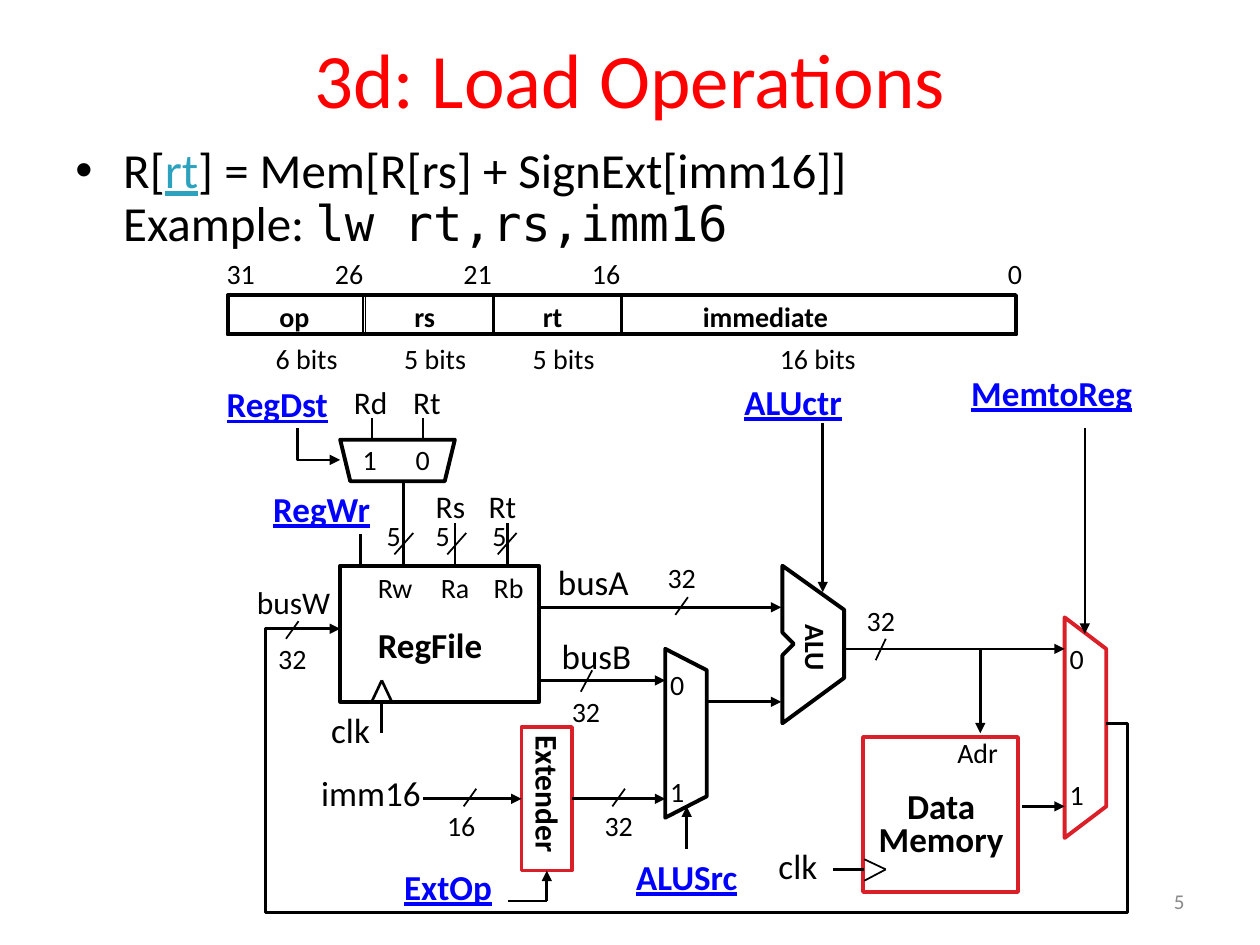
import lxml.etree
import pptx
import pptx.dml.color
import pptx.enum.shapes
import pptx.enum.text
import pptx.oxml.ns
import pptx.util

RGBColor = pptx.dml.color.RGBColor
BLACK = RGBColor(0x00, 0x00, 0x00)
BLUE = RGBColor(0x00, 0x00, 0xFF)
RED = RGBColor(0xFF, 0x00, 0x00)
CRIMSON = RGBColor(0xDA, 0x1F, 0x28)
TEAL = RGBColor(0x2D, 0xA2, 0xBF)
GRAY = RGBColor(0x89, 0x89, 0x89)

WIDTH, HEIGHT = pptx.util.Inches(10), pptx.util.Inches(7.5)
COLUMNS, ROWS = 100, 75
ALIGN = pptx.enum.text.PP_ALIGN
ANCHOR = pptx.enum.text.MSO_ANCHOR
TOP, LEFT, BOTTOM, RIGHT = range(4)
LABEL_ROWS = {16: 3.7, 18: 4, 20: 4.3}

# name, left, width, name left, name width, high bit, bit left, size, size left, size width
FIELDS = [
    ("op", 18, 10.8, 21.2, 4.4, "31", 17, "6 bits", 20.9, 7),
    ("rs", 29, 10.1, 31.9, 3.7, "26", 25.6, "5 bits", 31.1, 7),
    ("rt", 39.2, 10.1, 42.1, 3.7, "21", 35.8, "5 bits", 41.3, 7),
    ("immediate", 49.4, 31.3, 54.8, 12.1, "16", 46, "16 bits", 60.9, 8.1),
]

# text, left, top, width, size
PLAIN_LABELS = [
    ("clk", 25.3, 55.7, 5.1, 20), ("clk", 60.8, 66.5, 5.1, 20),
    ("busW", 19.4, 45.8, 7.9, 18), ("busA", 43.3, 44, 7.8, 20),
    ("busB", 43.6, 49.9, 7.7, 20), ("imm16", 24.5, 60.7, 10, 20),
    ("32", 67.8, 47.4, 4.3, 16), ("32", 21.1, 50.4, 4.3, 16),
    ("32", 52, 44, 4.3, 16), ("32", 44.4, 54.6, 4.3, 16),
    ("32", 47, 63.7, 4.3, 16), ("16", 34.5, 63.7, 4.3, 16),
    ("5", 29.7, 40.7, 3.1, 16), ("5", 33.6, 40.7, 3.1, 16), ("5", 38.1, 40.7, 3.1, 16),
    ("Rw", 29, 44.8, 4.8, 16), ("Ra", 34, 44.8, 4.4, 16), ("Rb", 38.2, 44.8, 4.6, 16),
    ("Rs", 33.6, 38.2, 4.4, 18), ("Rt", 37.8, 38.2, 4.3, 18),
    ("Rd", 27.1, 29.9, 4.7, 18), ("Rt", 31.8, 29.9, 4.3, 18),
    ("1", 27.8, 34.6, 3.1, 16), ("0", 32, 34.6, 3.1, 16),
    ("0", 52.2, 52.5, 3.1, 16), ("1", 52.2, 61, 3.1, 16),
    ("0", 83.9, 50.4, 3.1, 16), ("1", 83.9, 61.2, 3.1, 16),
    ("Adr", 75, 57.9, 5.4, 16),
]
CONTROL_SIGNALS = [
    ("RegDst", 17, 29.9, 10.3), ("RegWr", 20.7, 38.2, 9.9),
    ("ALUctr", 58.1, 29.7, 11.4), ("MemtoReg", 76.1, 29, 14.9),
    ("ExtOp", 31.1, 68.2, 9), ("ALUSrc", 49.5, 67.4, 10.4),
]

REGISTER_MUX = [(27, 34.9), (27.8, 38.2), (35.3, 38.2), (36.1, 34.9)]
SOURCE_MUX = [(52.8, 51.5), (52.8, 64.9), (56.1, 63.2), (56.1, 53.2)]
RESULT_MUX = [(84.5, 49), (84.5, 66.5), (87.8, 64), (87.8, 51.5)]
ALU = [(62.1, 44.9), (62.1, 50.2), (63, 51.1), (62.1, 52),
       (62.1, 57.4), (67, 53.8), (67, 48.4)]
REGDST_PATH = [(23.6, 34), (23.6, 36.5), (27, 36.5)]
WRITE_BACK_PATH = [(87.8, 57.4), (89.5, 57.4), (89.5, 72.4),
                   (21.1, 72.4), (21.1, 49.9), (27, 49.9)]

ARROWS = [
    (86.1, 34, 86.1, 50.3), (65.3, 33.6, 65.3, 47), (42.8, 48.2, 62, 48.2),
    (42.8, 54, 52.8, 54), (56.1, 55.7, 62, 55.7), (54.5, 67.4, 54.5, 64),
    (67, 51.5, 84.5, 51.5), (77.8, 51.5, 77.8, 58.2), (81.1, 64, 84.5, 64),
]
WIRES = [
    (28.6, 42.4, 28.6, 44.9), (32, 38.2, 32, 44.9), (36.1, 41.5, 36.1, 44.9),
    (40.3, 41.5, 40.3, 44.9), (30.3, 55.7, 30.3, 58.2), (68.6, 69, 66.1, 69),
    (30.3, 54, 29.5, 55.7), (30.3, 54, 31.1, 55.7),
]
THIN_WIRES = [
    (68.6, 68.2, 70.3, 69), (70.3, 69, 68.6, 69.9),
    (29.5, 33.2, 29.5, 34.9), (33.6, 33.2, 33.6, 34.9),
    (46.1, 54.9, 47, 53.2), (70.3, 50.7, 69.5, 52.4), (43.4, 71.5, 40.3, 71.5),
]
BUS_SLASHES = [(23.7, 49.3), (54.6, 47.4), (49.6, 62.6), (37.8, 62.6)]
PORT_SLASHES = [31.3, 35.5, 39.5]


def column(count):
    return round(WIDTH * count / COLUMNS)


def row(count):
    return round(HEIGHT * count / ROWS)


def style(font, size, color=BLACK, bold=False, underline=False):
    font.name = "Calibri"
    font.size = pptx.util.Pt(size)
    font.color.rgb = color
    font.bold = bold
    font.underline = underline


def add_text(slide, left, top, width, height, wrap=True):
    box = slide.shapes.add_textbox(column(left), row(top), column(width), row(height))
    box.text_frame.word_wrap = wrap
    return box


def add_label(slide, text, left, top, width, size, **look):
    """Add a one-line label that does not wrap."""
    box = add_text(slide, left, top, width, LABEL_ROWS[size], wrap=False)
    box.text_frame.auto_size = pptx.enum.text.MSO_AUTO_SIZE.SHAPE_TO_FIT_TEXT
    paragraph = box.text_frame.paragraphs[0]
    paragraph.text = text
    style(paragraph.font, size, **look)
    return box


def outline(shape, color, weight):
    shape.shadow.inherit = False
    shape.fill.background()
    shape.line.color.rgb = color
    shape.line.width = pptx.util.Pt(weight)


def add_arrowhead(shape):
    line = shape._element.spPr.get_or_add_ln()
    lxml.etree.SubElement(line, pptx.oxml.ns.qn("a:tailEnd"), type="triangle")


def add_box(slide, left, top, width, height, color=BLACK, weight=2.25):
    box = slide.shapes.add_shape(pptx.enum.shapes.MSO_SHAPE.RECTANGLE,
                                 column(left), row(top), column(width), row(height))
    outline(box, color, weight)
    return box


def add_path(slide, points, color=BLACK, weight=2.25, closed=True):
    """Add a closed outline, or an open path that ends in an arrowhead."""
    corners = [(column(x), row(y)) for x, y in points]
    builder = slide.shapes.build_freeform(*corners[0])
    builder.add_line_segments(corners[1:], close=closed)
    shape = builder.convert_to_shape()
    outline(shape, color, weight)
    if not closed:
        add_arrowhead(shape)


def add_wire(slide, x1, y1, x2, y2, weight=1.5, arrow=False):
    wire = slide.shapes.add_connector(pptx.enum.shapes.MSO_CONNECTOR.STRAIGHT,
                                      column(x1), row(y1), column(x2), row(y2))
    wire.line.color.rgb = BLACK
    wire.line.width = pptx.util.Pt(weight)
    lxml.etree.SubElement(wire._element.spPr, pptx.oxml.ns.qn("a:effectLst"))
    if arrow:
        add_arrowhead(wire)
    return wire


def add_headings(slide):
    title = add_text(slide, 5, -0.1, 90, 12.5).text_frame
    number = add_text(slide, 71.7, 69.5, 23.3, 4).text_frame
    for frame, text, align, size, color in [
            (title, "3d: Load Operations", ALIGN.CENTER, 44, RED),
            (number, "5", ALIGN.RIGHT, 12, GRAY)]:
        frame.vertical_anchor = ANCHOR.MIDDLE
        paragraph = frame.paragraphs[0]
        paragraph.text = text
        paragraph.alignment = align
        style(paragraph.font, size, color)


def add_bullet(slide):
    paragraph = add_text(slide, 5, 11.1, 90, 9.5).text_frame.paragraphs[0]
    paragraph.line_spacing = 0.9
    properties = paragraph._p.get_or_add_pPr()
    indent = column(3.8)
    properties.set("marL", str(indent))
    properties.set("indent", str(-indent))
    lxml.etree.SubElement(properties, pptx.oxml.ns.qn("a:buFont"), typeface="Arial")
    lxml.etree.SubElement(properties, pptx.oxml.ns.qn("a:buChar"), char="•")
    for text in ["R[", "rt", "] = Mem[R[rs] + SignExt[imm16]]", "Example: ", "lw rt,rs,imm16"]:
        if text == "Example: ":
            paragraph.add_line_break()
        run = paragraph.add_run()
        run.text = text
        linked = text == "rt"
        style(run.font, 28, TEAL if linked else BLACK, underline=linked)
    run.font.name = "DejaVu Sans Mono"


def add_instruction_format(slide):
    add_box(slide, 18.1, 23.4, 62.5, 3.1, weight=2)
    for (name, left, width, name_left, name_width,
         bit, bit_left, size, size_left, size_width) in FIELDS:
        add_box(slide, left, 23.4, width, 3.2, weight=1)
        add_label(slide, name, name_left, 23.3, name_width, 16, bold=True)
        add_label(slide, bit, bit_left, 19.9, 4.3, 16)
        add_label(slide, size, size_left, 26.6, size_width, 16)
    add_label(slide, "0", 79, 19.9, 3.1, 16)


def add_units(slide):
    """Add the datapath's blocks and return the extender."""
    add_box(slide, 27, 44.9, 15.8, 10.8)
    add_label(slide, "RegFile", 29, 49, 10.4, 20, bold=True)
    extender = add_box(slide, 41.4, 57.7, 4, 11.4, CRIMSON, 2)
    add_label(slide, "Extender", 37.6, 61.3, 11.8, 18, bold=True).rotation = 90
    add_label(slide, "ALU", 61.8, 49.7, 5.9, 16, bold=True).rotation = 90
    add_box(slide, 68.5, 58.5, 12.3, 12.3, CRIMSON)
    memory = add_text(slide, 68.7, 62.4, 12, 6.5, wrap=False).text_frame
    memory.text = "Data\nMemory"
    for paragraph in memory.paragraphs:
        paragraph.alignment = ALIGN.CENTER
        paragraph.line_spacing = 0.8
        style(paragraph.font, 20, bold=True)
    for points in (REGISTER_MUX, SOURCE_MUX, ALU):
        add_path(slide, points)
    add_path(slide, RESULT_MUX, CRIMSON)
    return extender


def add_wiring(slide, extender):
    for points in (REGDST_PATH, WRITE_BACK_PATH):
        add_path(slide, points, weight=1.5, closed=False)
    for ends in ARROWS:
        add_wire(slide, *ends, arrow=True)
    for ends in WIRES:
        add_wire(slide, *ends)
    slashes = [(x, y, x - 1, y + 1.4) for x, y in BUS_SLASHES]
    slashes += [(x, 44, x + 1.5, 42.3) for x in PORT_SLASHES]
    for ends in THIN_WIRES + slashes:
        add_wire(slide, *ends, weight=1)
    add_wire(slide, 33.6, 63.4, 41.4, 63.4, arrow=True).end_connect(extender, LEFT)
    add_wire(slide, 45.4, 63.4, 52.8, 63.4, arrow=True).begin_connect(extender, RIGHT)
    add_wire(slide, 43.4, 71.5, 43.4, 69.1, arrow=True).end_connect(extender, BOTTOM)


def main():
    presentation = pptx.Presentation()
    presentation.slide_width, presentation.slide_height = WIDTH, HEIGHT
    slide = presentation.slides.add_slide(presentation.slide_layouts[6])
    add_headings(slide)
    add_bullet(slide)
    add_instruction_format(slide)
    extender = add_units(slide)
    add_wiring(slide, extender)
    for label in PLAIN_LABELS:
        add_label(slide, *label)
    for signal in CONTROL_SIGNALS:
        add_label(slide, *signal, 20, color=BLUE, bold=True, underline=True)
    presentation.save("out.pptx")


if __name__ == "__main__":
    main()
